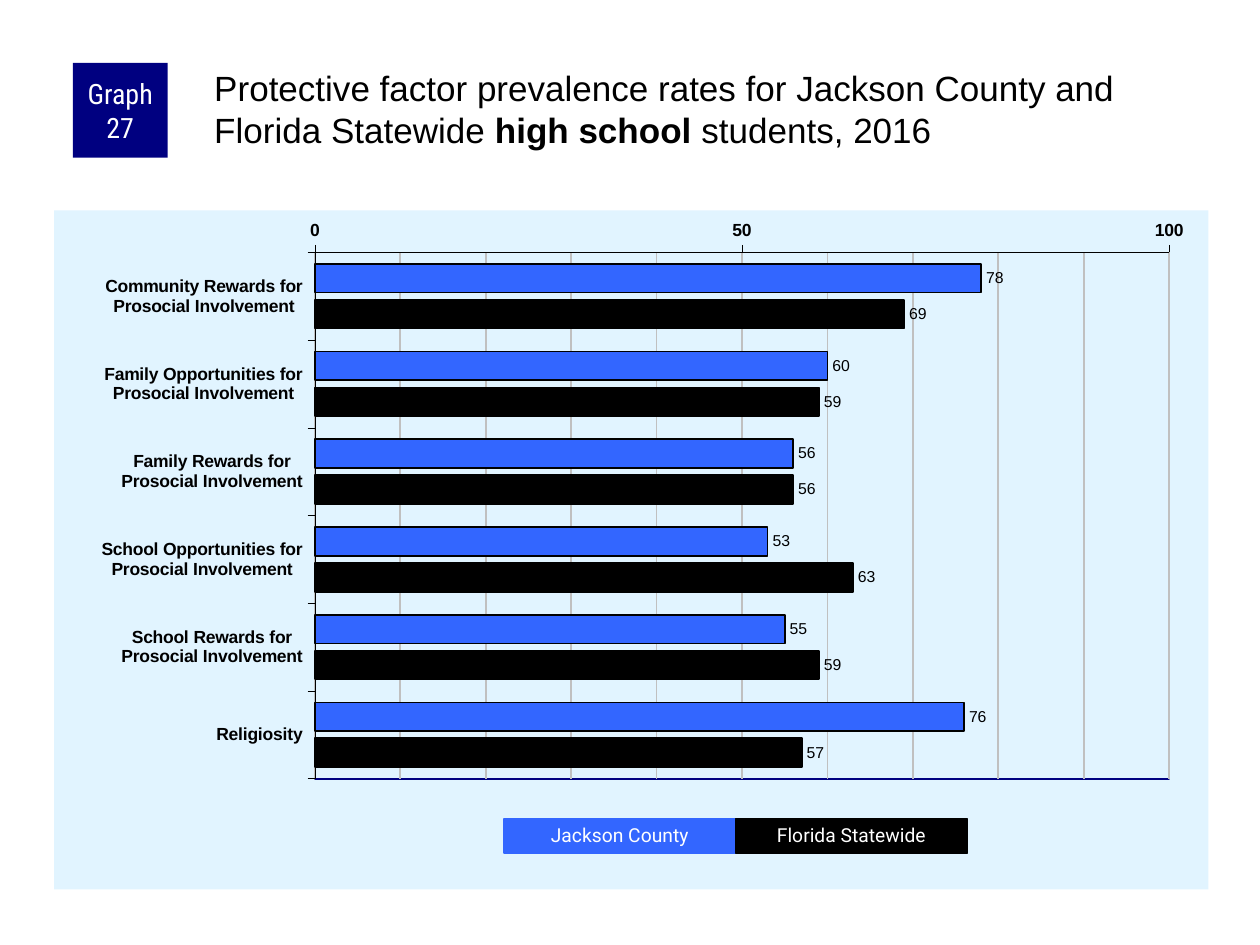
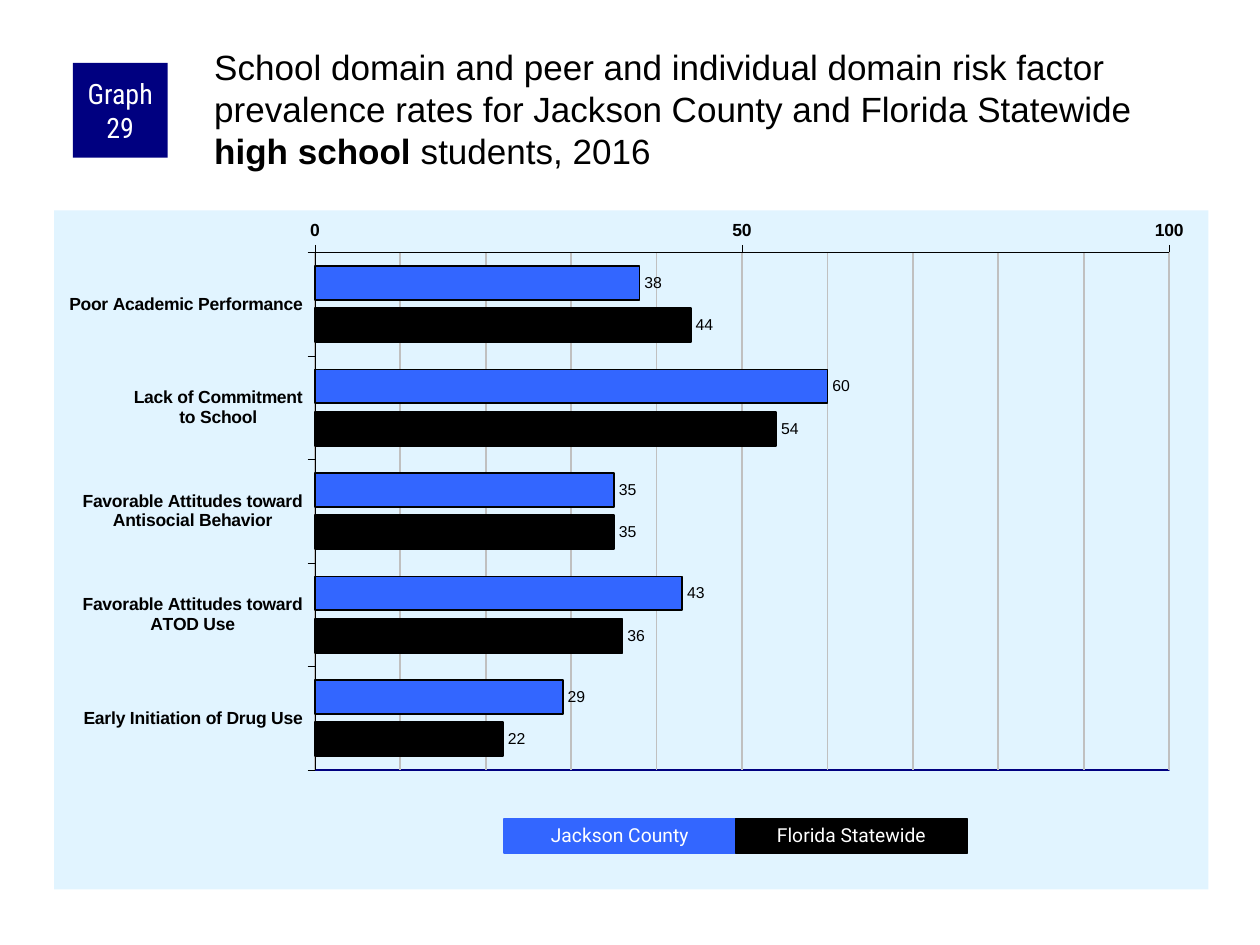
from copy import deepcopy
from lxml.etree import fromstring
from pptx import Presentation
from pptx.chart.data import CategoryChartData as ChartData
from pptx.dml.color import RGBColor as Rgb
from pptx.enum.chart import XL_AXIS_CROSSES as Cross
from pptx.enum.chart import XL_CHART_TYPE as Kind
from pptx.enum.chart import XL_LABEL_POSITION as Spot
from pptx.enum.chart import XL_TICK_MARK as Tick
from pptx.enum.shapes import MSO_SHAPE as Form
from pptx.enum.text import MSO_ANCHOR as Anchor
from pptx.enum.text import PP_ALIGN as Align
from pptx.oxml.ns import nsdecls, qn
from pptx.util import Cm, Pt

# Content
GROUPS = [("Jackson County", "blue"), ("Florida Statewide", "black")]
PAGES = [
    {
        "badge": "Graph 27",
        "title": [("Protective factor prevalence rates for Jackson County "
                   "and Florida Statewide ", False),
                  ("high school ", True), ("students, 2016", False)],
        "top": 1.27,
        "depth": 0.775,
        "rows": [
            ("Community Rewards for\nProsocial Involvement", 78, 69),
            ("Family Opportunities for\nProsocial Involvement", 60, 59),
            ("Family Rewards for\nProsocial Involvement", 56, 56),
            ("School Opportunities for\nProsocial Involvement", 53, 63),
            ("School Rewards for\nProsocial Involvement", 55, 59),
            ("Religiosity", 76, 57),
        ],
    },
    {
        "badge": "Graph 29",
        "title": [("School domain and peer and individual domain risk factor "
                   "prevalence rates for Jackson County and Florida "
                   "Statewide ", False),
                  ("high school", True), (" students, 2016", False)],
        "top": 0.84,
        "depth": 0.762,
        "rows": [
            ("Poor Academic Performance", 38, 44),
            ("Lack of Commitment\nto School", 60, 54),
            ("Favorable Attitudes toward\nAntisocial Behavior", 35, 35),
            ("Favorable Attitudes toward\nATOD Use", 43, 36),
            ("Early Initiation of Drug Use", 29, 22),
        ],
    },
]

# Shared style
HUES = {"blue": "3366FF", "black": "000000", "navy": "000080",
        "pale": "E1F4FF", "grid": "C0C0C0", "white": "FFFFFF"}
KEY = (10.16, 16.51, 4.67, 0.69)


def hue(name):
    return Rgb.from_string(HUES[name])


def style(font, size, color="black", face="Arial", bold=False):
    font.size, font.name, font.bold = Pt(size), face, bold
    font.color.rgb = hue(color)


def stroke(line, color, width):
    line.color.rgb = hue(color)
    line.width = Pt(width)


def box(slide, place, text, fill, size, face):
    """Filled rectangle with centred white text."""
    shape = slide.shapes.add_shape(Form.RECTANGLE, *map(Cm, place))
    shape.shadow.inherit = False
    shape.fill.solid()
    shape.fill.fore_color.rgb = hue(fill)
    stroke(shape.line, fill, 0.75)
    frame = shape.text_frame
    frame.text = text
    frame.word_wrap = True
    frame.vertical_anchor = Anchor.MIDDLE
    para = frame.paragraphs[0]
    para.alignment = Align.CENTER
    style(para.runs[0].font, size, "white", face)
    return shape


def add_badge(slide, text):
    badge = box(slide, (1.47, 1.27, 1.91, 1.91), text, "navy", 16,
                "Roboto Condensed")
    badge.line.fill.background()
    frame = badge.text_frame
    frame.margin_left = frame.margin_right = Cm(0.13)
    frame.margin_top = frame.margin_bottom = 0


def add_title(slide, parts, top):
    title = slide.shapes.add_textbox(Cm(4.24), Cm(top), Cm(20.12), Cm(2.11))
    frame = title.text_frame
    frame.word_wrap = True
    frame.margin_left = frame.margin_top = Cm(0.08)
    frame.margin_right = frame.margin_bottom = 0
    for text, bold in parts:
        run = frame.paragraphs[0].add_run()
        run.text = text
        style(run.font, 20, bold=bold)


def add_key(slide):
    left, top, wide, high = KEY
    for i, (name, fill) in enumerate(GROUPS):
        tab = box(slide, (left + i * wide, top, wide, high), name, fill,
                  11, "Roboto")
        tab.text_frame.paragraphs[0].line_spacing = 0.9


def frame_plot(chart, depth):
    """Chart background, plot border and plot position."""
    space = chart.element
    names = nsdecls("c", "a")
    back = (f'<c:spPr {names}><a:solidFill><a:srgbClr val="{HUES["pale"]}"/>'
            '</a:solidFill><a:ln><a:noFill/></a:ln></c:spPr>')
    space.find(qn("c:chart")).addnext(fromstring(back))
    area = space.find(".//" + qn("c:plotArea"))
    edge = (f'<c:spPr {names}><a:noFill/><a:ln w="12700"><a:solidFill>'
            f'<a:srgbClr val="{HUES["navy"]}"/></a:solidFill></a:ln></c:spPr>')
    area.append(fromstring(edge))
    for old in area.findall(qn("c:layout")):
        area.remove(old)
    spots = {"x": 0.226, "y": 0.062, "w": 0.74, "h": depth}
    marks = "".join(f'<c:{k}Mode val="edge"/>' for k in "xy")
    sizes = "".join(f'<c:{k} val="{v}"/>' for k, v in spots.items())
    area.insert(0, fromstring(
        f'<c:layout {names}><c:manualLayout><c:layoutTarget val="inner"/>'
        f'{marks}{sizes}</c:manualLayout></c:layout>'))


def add_grid(chart):
    """Major and minor gridlines with one look."""
    axis = chart.value_axis
    axis.has_major_gridlines = axis.has_minor_gridlines = True
    stroke(axis.major_gridlines.format.line, "grid", 1)
    major, minor = (chart.element.find(f".//{qn(tag)}")
                    for tag in ("c:majorGridlines", "c:minorGridlines"))
    minor.append(deepcopy(major[0]))


def add_bars(slide, rows, depth):
    names, *values = zip(*rows)
    data = ChartData()
    data.categories = names
    for (name, _), nums in zip(GROUPS, values):
        data.add_series(name, nums)
    place = map(Cm, (1.09, 4.24, 23.27, 13.69))
    chart = slide.shapes.add_chart(Kind.BAR_CLUSTERED, *place, data).chart
    chart.has_legend = chart.has_title = False
    style(chart.font, 11.8)

    # Bars and their labels
    plot = chart.plots[0]
    plot.gap_width, plot.overlap = 80, -25
    plot.vary_by_categories = False
    for bars, (_, fill) in zip(plot.series, GROUPS):
        bars.format.fill.solid()
        bars.format.fill.fore_color.rgb = hue(fill)
        stroke(bars.format.line, "black", 1)
        labels = bars.data_labels
        labels.show_value = True
        labels.position = Spot.OUTSIDE_END
        style(labels.font, 9)

    # Axes
    cats, vals = chart.category_axis, chart.value_axis
    for axis in (cats, vals):
        axis.major_tick_mark = Tick.OUTSIDE
        axis.minor_tick_mark = Tick.NONE
        stroke(axis.format.line, "black", 0.25)
        style(axis.tick_labels.font, 10, bold=True)
    cats.reverse_order = True
    cats.crosses = Cross.MAXIMUM
    vals.minimum_scale, vals.maximum_scale = 0, 100
    vals.major_unit, vals.minor_unit = 50, 10
    add_grid(chart)
    frame_plot(chart, depth)


def main():
    deck = Presentation()
    deck.slide_width, deck.slide_height = Cm(25.4), Cm(19.05)
    for page in PAGES:
        slide = deck.slides.add_slide(deck.slide_layouts[6])
        add_bars(slide, page["rows"], page["depth"])
        add_badge(slide, page["badge"])
        add_title(slide, page["title"], page["top"])
        add_key(slide)
    deck.save("out.pptx")


if __name__ == "__main__":
    main()
